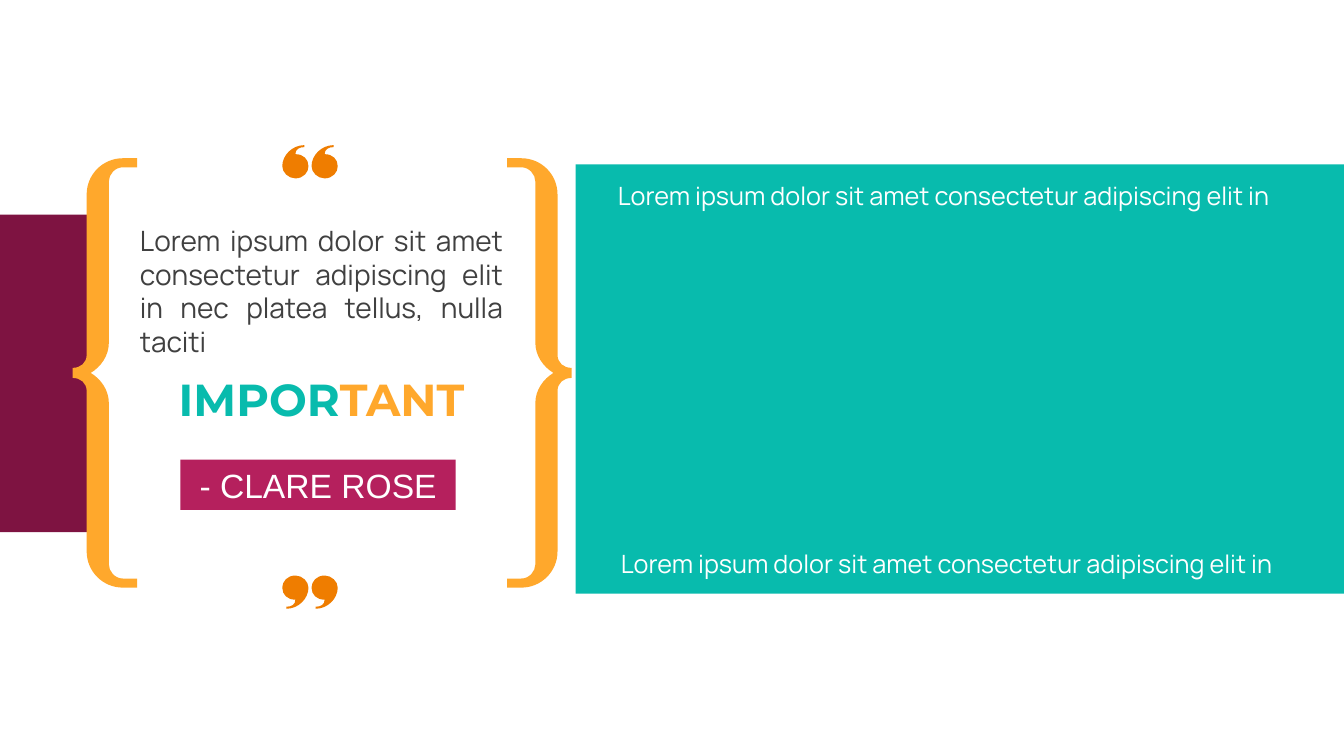
import pptx
import pptx.util
import pptx.dml.color
import pptx.enum.shapes
import pptx.enum.text
import pptx.oxml.ns

RGB = pptx.dml.color.RGBColor
TEAL = RGB(0x08, 0xBB, 0xAD)
AMBER = RGB(0xFF, 0xA8, 0x2C)
ORANGE = RGB(0xEF, 0x7D, 0x00)
WINE = RGB(0x7E, 0x13, 0x41)
PINK = RGB(0xB5, 0x20, 0x5D)
GRAY = RGB(0x40, 0x40, 0x40)
WHITE = RGB(0xFF, 0xFF, 0xFF)
ALIGN = pptx.enum.text.PP_ALIGN
RECT = pptx.enum.shapes.MSO_SHAPE.RECTANGLE
CELL = pptx.util.Inches(0.01)

deck = pptx.Presentation()
deck.slide_width = 1333 * CELL
deck.slide_height = 750 * CELL
slide = deck.slides.add_slide(deck.slide_layouts[6])
shapes = slide.shapes


def draw(home, color, form, sizes=None):
    if sizes:
        pen = home.build_freeform(*form[0], scale=CELL)
        pen.add_line_segments(form[1:], close=True)
        shape = pen.convert_to_shape()
        lines = iter(list(shape._element.iter(pptx.oxml.ns.qn("a:lnTo"))))
        for size in sizes:
            line = next(lines)
            if size == 3:
                line.tag = pptx.oxml.ns.qn("a:cubicBezTo")
                for extra in (next(lines), next(lines)):
                    line.append(extra[0])
                    extra.getparent().remove(extra)
    else:
        shape = home.add_shape(RECT, *[n * CELL for n in form])
    shape.shadow.inherit = False
    shape.fill.solid()
    shape.fill.fore_color.rgb = color
    shape.line.fill.background()
    return shape


def write(frame, lines):
    frame.word_wrap = True
    for index, (align, space, runs) in enumerate(lines):
        para = frame.paragraphs[0] if index == 0 else frame.add_paragraph()
        para.alignment = align
        para.line_spacing = space
        if index:
            para.space_before = pptx.util.Pt(10)
        for text, font, size, bold, color in runs:
            run = para.add_run()
            run.text = text
            run.font.name = font
            run.font.size = pptx.util.Pt(size)
            run.font.bold = bold
            run.font.color.rgb = color


half = [
    (72, 365), (80, 365), (86, 360), (86, 352),
    (86, 193), (86, 173), (102, 157), (122, 157),
    (136, 157), (136, 166), (122, 166),
    (114, 166), (108, 173), (108, 180),
    (108, 340), (108, 353), (100, 364), (90, 370),
]
bends = [3, 1, 3, 1, 1, 1, 3, 1, 3]
left = half + [(x, 740 - y) for x, y in half[-2::-1]]
right = [(639 - x, y) for x, y in left]
bends += bends[::-1]

mark = [
    (293, 153), (293, 148), (297, 146), (302, 146),
    (302, 144), (290, 144), (280, 154), (280, 165),
    (280, 171), (286, 177), (293, 177),
    (301, 177), (306, 171), (306, 165),
    (306, 158), (301, 153), (293, 153),
]
turned = [(586 - x, 748 - y) for x, y in mark]

draw(shapes, TEAL, (571, 163, 762, 426))
frame = shapes.add_group_shape().shapes
draw(frame, AMBER, right, bends)
draw(frame, WINE, (0, 213, 89, 315))
draw(frame, AMBER, left, bends)

lorem = "Lorem ipsum dolor sit amet consectetur adipiscing elit in"
label = [(ALIGN.JUSTIFY, 0.9, [(lorem, "Manrope", 18, False, WHITE)])]
quote = [
    (ALIGN.JUSTIFY, 1.0, [(lorem + " nec platea tellus, nulla taciti ", "Manrope", 20, False, GRAY)]),
    (ALIGN.CENTER, 1.0, [
        ("IMPOR", "Montserrat", 32, True, TEAL),
        ("TANT", "Montserrat", 32, True, AMBER),
    ]),
]
for area, lines in [
    ((129, 217, 380, 316), quote),
    ((603, 177, 693, 50), label),
    ((606, 542, 693, 50), label),
]:
    write(shapes.add_textbox(*[n * CELL for n in area]).text_frame, lines)

marks = shapes.add_group_shape().shapes
for base in (mark, turned):
    for shift in (0, 29):
        draw(marks, ORANGE, [(x + shift, y) for x, y in base], [3, 1, 3, 3, 3, 3])

name = draw(shapes, PINK, (179, 456, 273, 50))
write(name.text_frame, [(ALIGN.CENTER, 1.0, [("- CLARE ROSE", "Arial", 24, False, WHITE)])])

deck.save("out.pptx")
